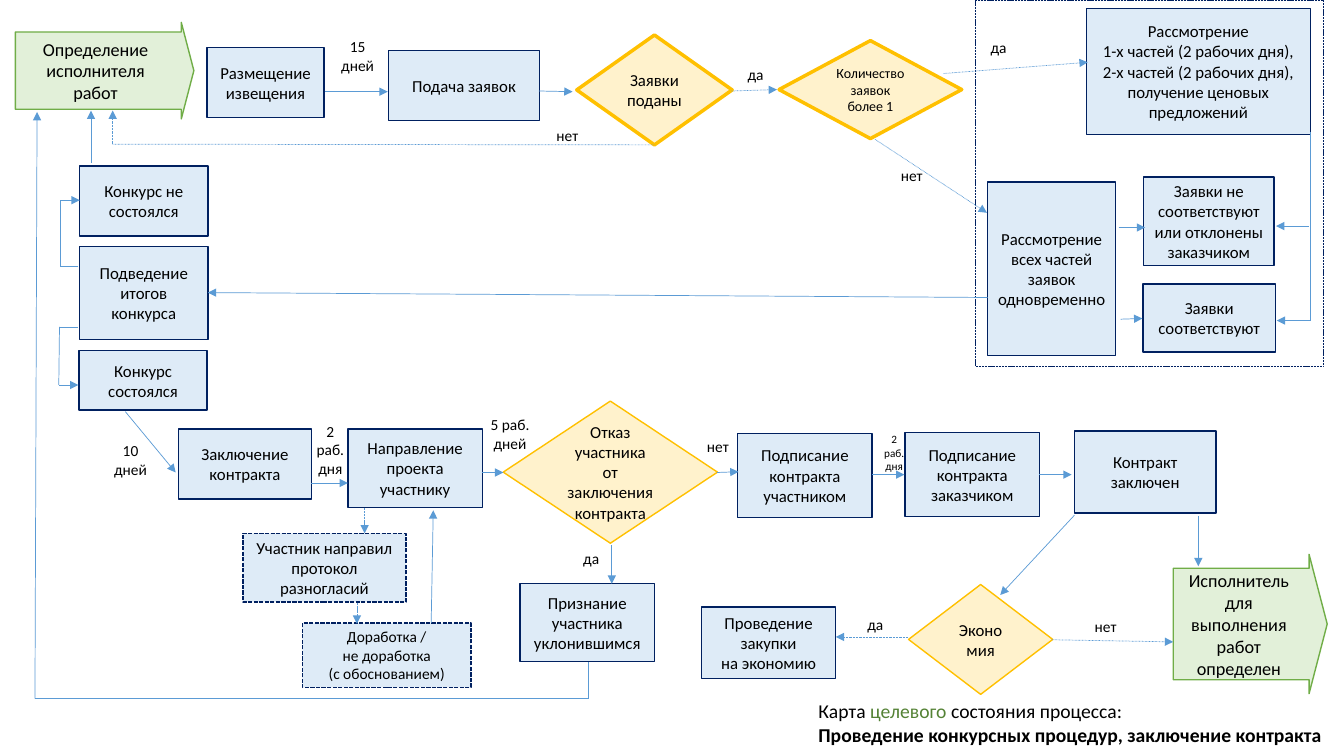
from lxml import etree
from pptx import Presentation
from pptx import util as u
from pptx.dml.color import RGBColor
from pptx.enum import dml, shapes, text
from pptx.oxml.ns import qn

NAVY = RGBColor(0x00, 0x20, 0x60)
PALE_BLUE = RGBColor(0xDE, 0xEB, 0xF7)
ARROW_BLUE = RGBColor(0x5B, 0x9B, 0xD5)
GOLD = RGBColor(0xFF, 0xC0, 0x00)
PALE_GOLD = RGBColor(0xFF, 0xF2, 0xCC)
GREEN = RGBColor(0x70, 0xAD, 0x47)
PALE_GREEN = RGBColor(0xE2, 0xF0, 0xD9)
DARK_GREEN = RGBColor(0x54, 0x82, 0x35)
BLACK = RGBColor(0, 0, 0)
FONT = "Calibri"
DOT = dml.MSO_LINE.ROUND_DOT
DASH = dml.MSO_LINE.SQUARE_DOT


def write_centred(shape, words, size):
    """Fill a shape with centred text, one paragraph per line of words."""
    frame = shape.text_frame
    frame.word_wrap = True
    frame.vertical_anchor = text.MSO_ANCHOR.MIDDLE
    frame.text = words
    for para in frame.paragraphs:
        para.alignment = text.PP_ALIGN.CENTER
        para.font.name = FONT
        para.font.size = u.Pt(size)
        para.font.color.rgb = BLACK


def add_node(kind, place, fill, line, weight, dash=None):
    """Add an outlined shape at (left, top, width, height) in points."""
    node = page.shapes.add_shape(kind, *(u.Pt(n) for n in place))
    node.shadow.inherit = False
    if fill is None:
        node.fill.background()
    else:
        node.fill.solid()
        node.fill.fore_color.rgb = fill
    node.line.color.rgb = line
    node.line.width = u.Pt(weight)
    if dash:
        node.line.dash_style = dash
    return node


deck = Presentation()
deck.slide_width, deck.slide_height = u.Pt(960), u.Pt(540)
page = deck.slides.add_slide(deck.slide_layouts[6])

# Frame around the review of applications
add_node(shapes.MSO_SHAPE.RECTANGLE, (697, 0, 248.5, 262), None, NAVY, 0.5, DASH)

# Start and end of the process
milestones = [
    ("Определение исполнителя работ", (11, 16, 127.5, 69)),
    ("Исполнитель для выполнения работ определен", (838, 396, 110, 99.5)),
]
for words, place in milestones:
    arrow = add_node(shapes.MSO_SHAPE.RIGHT_ARROW, place, PALE_GREEN, GREEN, 1)
    arrow.adjustments[0], arrow.adjustments[1] = 0.8, 0.13
    write_centred(arrow, words, 13)
    arrow.text_frame.margin_right = u.Pt(13)

# Steps: words, place, size, dash
steps = [
    ("Размещение извещения", (148, 34, 83.5, 50), 12, None),
    ("Подача заявок", (277.5, 36, 108, 50), 12, None),
    ("Рассмотрение\n1-х частей (2 рабочих дня),\n"
     "2-х частей (2 рабочих дня), получение ценовых предложений",
     (776, 6, 160, 90), 12, None),
    ("Рассмотрение\nвсех частей заявок одновременно",
     (705.5, 130, 91.5, 124), 12, None),
    ("Заявки не соответствуют или отклонены заказчиком",
     (817, 126.5, 93, 63), 12, None),
    ("Заявки соответствуют", (816.5, 203, 94.5, 48.5), 12, None),
    ("Конкурс не состоялся", (57, 118.5, 91.5, 50), 12, None),
    ("Подведение итогов конкурса", (57, 176, 91.5, 66.5), 12, None),
    ("Конкурс состоялся", (56.5, 250.5, 91.5, 42.5), 12, None),
    ("Заключение контракта", (127.5, 306.5, 95, 50), 12, None),
    ("Направление проекта участнику", (248.5, 306.5, 96, 56), 12, None),
    ("Участник направил протокол разногласий",
     (173.5, 381, 116.5, 49), 12, DASH),
    ("Доработка /\nне доработка\n(с обоснованием)",
     (216, 445, 120.5, 46), 11, DASH),
    ("Признание участника уклонившимся", (371.5, 417, 96, 55.5), 12, None),
    ("Подписание контракта участником", (527, 309.5, 96, 60), 12, None),
    ("Подписание контракта заказчиком", (646.5, 309, 96, 60), 12, None),
    ("Контракт заключен", (767.5, 308, 101, 58.5), 12, None),
    ("Проведение закупки\nна экономию", (501, 433.5, 96, 51), 12, None),
]
for words, place, size, dash in steps:
    step = add_node(shapes.MSO_SHAPE.RECTANGLE, place, PALE_BLUE, NAVY, 1, dash)
    write_centred(step, words, size)
    step.text_frame.margin_left = step.text_frame.margin_right = u.Pt(6)

# Decisions: words, place, size, outline weight
decisions = [
    ("Заявки поданы", (412, 25, 111, 78.5), 12, 2.5),
    ("Количество заявок более 1", (556.5, 29, 130.5, 70), 10, 2.5),
    ("Отказ участника от заключения контракта", (359.5, 286.5, 153, 101.5), 12, 1),
    ("Экономия", (649, 417.5, 103, 78.5), 12, 1),
]
for words, place, size, weight in decisions:
    decision = add_node(shapes.MSO_SHAPE.DIAMOND, place, PALE_GOLD, GOLD, weight)
    write_centred(decision, words, size)

# Routes: the last leg of each ends in an arrowhead
routes = [
    (None, [(232, 65.5), (277, 65.5)]),
    (None, [(385, 65), (409, 65.5)]),
    (DOT, [(522.5, 65), (555, 64)]),
    (DOT, [(467.5, 103.5), (80.5, 103), (80.5, 79)]),
    (DOT, [(674, 52.5), (777, 44.5)]),
    (DOT, [(625, 99.5), (705, 152)]),
    (None, [(936, 94.5), (936, 229), (912, 229)]),
    (None, [(935, 161.5), (911.5, 161.5)]),
    (None, [(799, 162.5), (818, 162.5)]),
    (None, [(800.5, 228), (816, 227.5)]),
    (None, [(705.5, 212.5), (148.5, 209)]),
    (None, [(56, 190), (43, 190), (43, 143), (57, 143)]),
    (None, [(65, 116.5), (65, 79)]),
    (None, [(55.5, 233.5), (42.5, 233.5), (42, 275), (56, 275)]),
    (None, [(89.5, 294), (125.5, 337.5)]),
    (None, [(222.5, 345), (248.5, 345)]),
    (DASH, [(260.5, 363), (260.5, 381)]),
    (DASH, [(255, 430.5), (255, 445.5)]),
    (None, [(308, 445), (309.5, 364.5)]),
    (None, [(344, 337.5), (359.5, 337.5)]),
    (None, [(437, 389.5), (437, 417)]),
    (None, [(420, 473), (420, 499), (25, 499), (26.5, 80)]),
    (None, [(512, 337.5), (527.5, 337)]),
    (None, [(623, 339), (646, 339)]),
    (None, [(742.5, 339), (765.5, 339)]),
    (None, [(767.5, 368), (714.5, 425)]),
    (None, [(856, 368.5), (856, 404.5)]),
    (DOT, [(751.5, 457), (838, 458.5)]),
    (DOT, [(648.5, 455), (597, 455)]),
]
for dash, points in routes:
    for start, end in zip(points, points[1:]):
        leg = page.shapes.add_connector(
            shapes.MSO_CONNECTOR.STRAIGHT, *(u.Pt(n) for n in start + end))
        leg.line.color.rgb = ARROW_BLUE
        leg.line.width = u.Pt(0.5)
        if dash:
            leg.line.dash_style = dash
        etree.SubElement(leg._element.spPr, qn("a:effectLst"))
    etree.SubElement(leg.line._get_or_add_ln(), qn("a:tailEnd"), type="triangle")

# Labels beside the routes: words, place, size
labels = [
    ("15 дней", (236, 27.5, 39, 25), 11),
    ("да", (523.5, 40.5, 32.5, 25), 11),
    ("нет", (389, 84.5, 32.5, 25), 11),
    ("да", (697, 21, 32.5, 25), 11),
    ("нет", (635, 114.5, 32.5, 22), 11),
    ("10 дней", (73.5, 316, 39.5, 25), 11),
    ("2\nраб.\nдня", (217, 304, 38, 34.5), 11),
    ("5 раб. дней", (337, 297.5, 54.5, 25), 11),
    ("да", (406, 386, 32.5, 25), 11),
    ("нет", (496.5, 306, 32.5, 25), 11),
    ("2 раб. дня", (622.5, 312.5, 32.5, 22), 8),
    ("да", (609, 433.5, 32.5, 25), 11),
    ("нет", (773.5, 435, 32.5, 25), 11),
]
for words, place, size in labels:
    label = page.shapes.add_textbox(*(u.Pt(n) for n in place))
    write_centred(label, words, size)

# Caption
caption = page.shapes.add_textbox(u.Pt(577.5), u.Pt(496), u.Pt(381), u.Pt(41))
caption.text_frame.word_wrap = True
caption.text_frame.text = "\nПроведение конкурсных процедур, заключение контракта"
heading, subject = caption.text_frame.paragraphs
for words, color in [("Карта ", BLACK), ("целевого", DARK_GREEN),
                     (" состояния процесса:", BLACK)]:
    span = heading.add_run()
    span.text = words
    span.font.color.rgb = color
for para in (heading, subject):
    para.font.name = FONT
    para.font.size = u.Pt(14)
subject.font.bold = True
subject.font.color.rgb = BLACK

deck.save("out.pptx")
